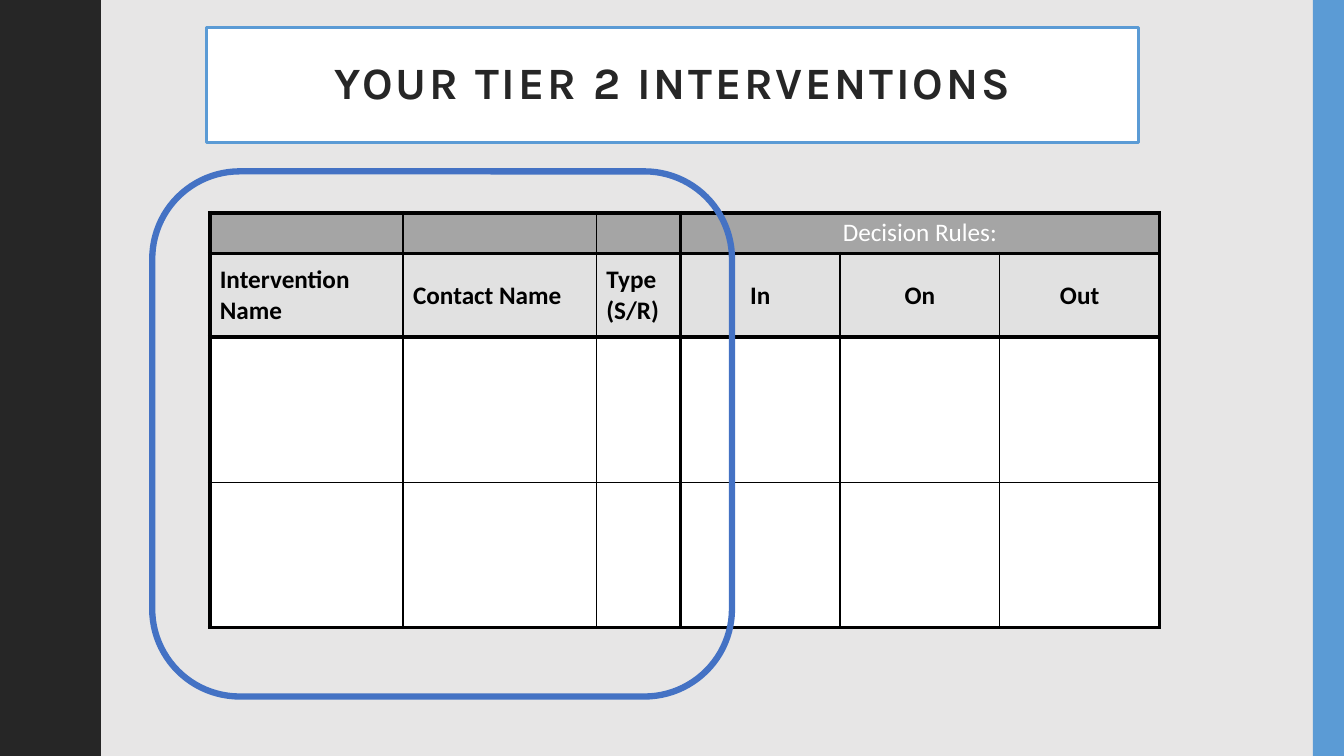
import itertools

import pptx
import pptx.dml.color
import pptx.enum.shapes
import pptx.enum.text
import pptx.oxml
import pptx.oxml.ns
import pptx.util

RGBColor = pptx.dml.color.RGBColor
SHAPES = pptx.enum.shapes.MSO_SHAPE
ALIGN = pptx.enum.text.PP_ALIGN
MIDDLE = pptx.enum.text.MSO_ANCHOR.MIDDLE
Inches = pptx.util.Inches
Pt = pptx.util.Pt

BLACK = RGBColor(0x00, 0x00, 0x00)
WHITE = RGBColor(0xFF, 0xFF, 0xFF)
CHARCOAL = RGBColor(0x26, 0x26, 0x26)
PALE_GREY = RGBColor(0xE7, 0xE6, 0xE6)
HEADER_GREY = RGBColor(0xE1, 0xE1, 0xE1)
BAND_GREY = RGBColor(0xA5, 0xA5, 0xA5)
SKY = RGBColor(0x5B, 0x9B, 0xD5)
BLUE = RGBColor(0x44, 0x72, 0xC4)

WIDTH, HEIGHT = 13.33, 7.5

# Boxes are left, top, width, height in inches.
WAVE_BOX = (0, 0, 0.97, HEIGHT)
STRIPE_BOX = (WIDTH - 0.31, 0, 0.31, HEIGHT)
TITLE_BOX = (2.05, 0.27, 9.24, 1.14)
TABLE_BOX = (2.08, 2.11, 9.42, 4.11)
HIGHLIGHT_BOX = (1.51, 1.7, 5.75, 5.21)

WAVES = 5
# First quarter of a wave: share of its length, share of its depth.
QUARTER_WAVE = [(0, 0), (0.05, 0.01), (0.09, 0.04), (0.13, 0.1),
                (0.17, 0.17), (0.19, 0.26), (0.22, 0.37), (0.25, 0.48)]

COLUMN_WEIGHTS = (23, 23, 10, 19, 19, 19)
ROW_WEIGHTS = (0.4, 0.83, 1.44, 1.44)
ROW_FILLS = (BAND_GREY, HEADER_GREY, WHITE, WHITE)
HEADINGS = ("Intervention Name", "Contact Name", "Type\n(S/R)", "In", "On", "Out")
RULES_COLUMN = 3
THICK_COLUMN_EDGES = (0, RULES_COLUMN, 6)
THICK_ROW_EDGES = (0, 1, 2, 4)


def paint(shape, fill=None, line=None, weight=0):
    shape.shadow.inherit = False
    for part, color in ((shape.fill, fill), (shape.line.fill, line)):
        if color is None:
            part.background()
        else:
            part.solid()
            part.fore_color.rgb = color
    if line is not None:
        shape.line.width = Pt(weight)


def format_text(frame, align, font_format):
    for paragraph in frame.paragraphs:
        paragraph.alignment = align
        for run in paragraph.runs:
            run.font.color.rgb = font_format["color"]
            for name in ("name", "size", "bold"):
                setattr(run.font, name, font_format[name])


def add_box(slide, preset, box, **colors):
    shape = slide.shapes.add_shape(preset, *map(Inches, box))
    paint(shape, **colors)
    return shape


def add_wavy_edge(slide, box):
    """Fill the box from its left side to a wavy right edge."""
    left, top, width, height = box
    depth = 0.2 * width
    length = height / WAVES
    half = QUARTER_WAVE + [(0.5 - y, 1 - x) for y, x in reversed(QUARTER_WAVE)]
    wave = half + [(1 - y, x) for y, x in reversed(half)]
    edge = [(left + width - depth + x * depth, top + (number + y) * length)
            for number in range(WAVES) for y, x in wave]
    builder = slide.shapes.build_freeform(left, top, scale=Inches(1))
    builder.add_line_segments(edge + [(left, top + height)], close=True)
    paint(builder.convert_to_shape(), fill=CHARCOAL)


def add_title(slide, box):
    title = add_box(slide, SHAPES.RECTANGLE, box, fill=WHITE, line=SKY, weight=2.25)
    frame = title.text_frame
    frame.word_wrap = True
    frame.vertical_anchor = MIDDLE
    frame.text = "YOUR TIER 2 INTERVENTIONS"
    format_text(frame, ALIGN.CENTER, {"name": "Karla", "size": Pt(32),
                                      "bold": True, "color": CHARCOAL})
    paragraph = frame.paragraphs[0]
    paragraph.line_spacing = 0.9
    paragraph.runs[0].font._element.set("spc", "200")


def set_borders(cell, row, first_column, last_column):
    edges = (("lnL", first_column in THICK_COLUMN_EDGES),
             ("lnR", last_column + 1 in THICK_COLUMN_EDGES),
             ("lnT", row in THICK_ROW_EDGES),
             ("lnB", row + 1 in THICK_ROW_EDGES))
    properties = cell._tc.get_or_add_tcPr()
    for position, (tag, thick) in enumerate(edges):
        properties.insert(position, pptx.oxml.parse_xml(
            f'<a:{tag} {pptx.oxml.ns.nsdecls("a")} w="{Pt(3 if thick else 1)}">'
            f'<a:solidFill><a:srgbClr val="{BLACK}"/></a:solidFill></a:{tag}>'))


def add_intervention_table(slide, box):
    rows, columns = len(ROW_WEIGHTS), len(COLUMN_WEIGHTS)
    table = slide.shapes.add_table(rows, columns, *map(Inches, box)).table
    table.first_row = table.horz_banding = False
    for column, weight in zip(table.columns, COLUMN_WEIGHTS):
        column.width = Inches(box[2] * weight / sum(COLUMN_WEIGHTS))
    for row, weight in zip(table.rows, ROW_WEIGHTS):
        row.height = Inches(box[3] * weight / sum(ROW_WEIGHTS))

    table.cell(0, RULES_COLUMN).merge(table.cell(0, columns - 1))
    texts = {(1, column): heading for column, heading in enumerate(HEADINGS)}
    texts[0, RULES_COLUMN] = "Decision Rules:"
    for row, column in itertools.product(range(rows), range(columns)):
        cell = table.cell(row, column)
        cell.fill.solid()
        cell.fill.fore_color.rgb = ROW_FILLS[row]
        cell.vertical_anchor = MIDDLE
        last_column = columns - 1 if cell.is_merge_origin else column
        set_borders(cell, row, column, last_column)
        if (row, column) in texts:
            cell.text = texts[row, column]
            format_text(cell.text_frame,
                        ALIGN.CENTER if column >= RULES_COLUMN else ALIGN.LEFT,
                        {"name": "Calibri", "size": Pt(18), "bold": row == 1,
                         "color": BLACK if row == 1 else WHITE})


def main():
    deck = pptx.Presentation()
    deck.slide_width, deck.slide_height = Inches(WIDTH), Inches(HEIGHT)
    slide = deck.slides.add_slide(deck.slide_layouts[6])
    slide.background.fill.solid()
    slide.background.fill.fore_color.rgb = PALE_GREY

    add_wavy_edge(slide, WAVE_BOX)
    add_box(slide, SHAPES.RECTANGLE, STRIPE_BOX, fill=SKY)
    add_title(slide, TITLE_BOX)
    add_intervention_table(slide, TABLE_BOX)
    add_box(slide, SHAPES.ROUNDED_RECTANGLE, HIGHLIGHT_BOX, line=BLUE, weight=4.5)
    deck.save("out.pptx")


if __name__ == "__main__":
    main()
